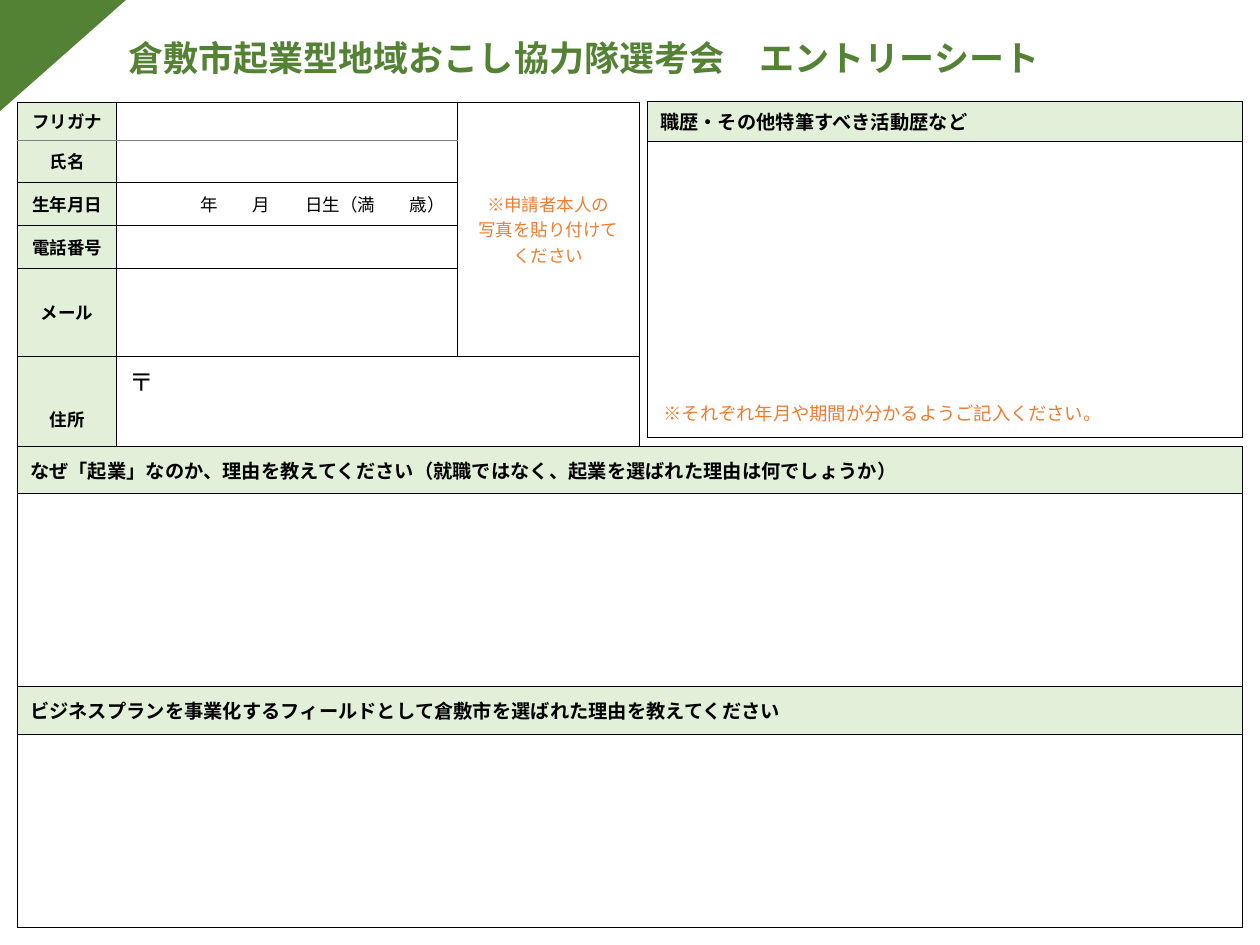
from lxml.etree import SubElement
from pptx import Presentation
from pptx.dml.color import RGBColor
from pptx.enum.shapes import MSO_SHAPE
from pptx.enum.text import MSO_ANCHOR, MSO_AUTO_SIZE, PP_ALIGN
from pptx.oxml.ns import qn
from pptx.util import Pt

FONT = "Noto Sans CJK JP"
GREEN = RGBColor(0x54, 0x82, 0x35)
PALE = RGBColor(0xE2, 0xF0, 0xD9)
ORANGE = RGBColor(0xED, 0x7D, 0x31)
BLACK = RGBColor(0, 0, 0)
GREY = RGBColor(0x80, 0x80, 0x80)
WHITE = RGBColor(0xFF, 0xFF, 0xFF)


def write(tf, text, size, color=BLACK, bold=False, align=PP_ALIGN.LEFT):
    """Fill a text frame, one paragraph for each line of text."""
    tf.word_wrap = True
    for i, line in enumerate(text.split("\n")):
        p = tf.add_paragraph() if i else tf.paragraphs[0]
        p.alignment = align
        r = p.add_run()
        r.text = line
        r.font.size, r.font.bold, r.font.name = Pt(size), bold, FONT
        r.font.color.rgb = color
        SubElement(r.font._element, qn("a:ea"), typeface=FONT)


def style_cell(cell, fill, top=BLACK, bottom=BLACK):
    """Set fill and borders, and keep an empty cell from growing its row."""
    cell.vertical_anchor = MSO_ANCHOR.MIDDLE
    tc_pr = cell._tc.get_or_add_tcPr()
    for tag, color in (("lnL", BLACK), ("lnR", BLACK), ("lnT", top), ("lnB", bottom)):
        ln = SubElement(tc_pr, qn(f"a:{tag}"), w=str(Pt(0.5)))
        SubElement(SubElement(ln, qn("a:solidFill")), qn("a:srgbClr"), val=str(color))
    cell.fill.solid()
    cell.fill.fore_color.rgb = fill
    cell.text_frame.paragraphs[0]._p.get_or_add_endParaRPr().set("sz", "1000")


def add_grid(s, x, y, widths, heights):
    table = s.shapes.add_table(len(heights), len(widths), Pt(x), Pt(y),
                               Pt(sum(widths)), Pt(sum(heights))).table
    table.first_row = table.horz_banding = False
    for col, w in zip(table.columns, widths):
        col.width = Pt(w)
    for row, h in zip(table.rows, heights):
        row.height = Pt(h)
    return table


def add_header(s, x, y, w, h):
    title = s.shapes.title
    title.left, title.top, title.width, title.height = Pt(x), Pt(y), Pt(w), Pt(h)
    tf = title.text_frame
    tf.auto_size = MSO_AUTO_SIZE.NONE
    tf.vertical_anchor = MSO_ANCHOR.MIDDLE
    tf.margin_top = tf.margin_bottom = 0
    write(tf, "倉敷市起業型地域おこし協力隊選考会　エントリーシート", 20, GREEN, True)


def add_corner(s, x, y, w, h):
    sp = s.shapes.add_shape(MSO_SHAPE.RIGHT_TRIANGLE, Pt(x), Pt(y), Pt(w), Pt(h))
    sp.rotation = 180
    sp._element.spPr.get_or_add_xfrm().set("flipH", "1")
    sp.shadow.inherit = False
    sp.fill.solid()
    sp.fill.fore_color.rgb = GREEN
    sp.line.fill.background()


def add_profile(s, x, y, w):
    labels = ["フリガナ", "氏名", "生年月日", "電話番号", "メール", "住所"]
    label_w, photo_w = 56.6, 103.9
    table = add_grid(s, x, y, [label_w, w - label_w - photo_w, photo_w],
                     [21.7, 24.3, 24.5, 24.5, 50.3, 71.3])
    table.cell(0, 2).merge(table.cell(4, 2))
    table.cell(5, 1).merge(table.cell(5, 2))
    for i, label in enumerate(labels):
        for j in range(3):
            in_name = j < 2
            style_cell(table.cell(i, j), WHITE if j else PALE,
                       top=GREY if in_name and i == 1 else BLACK,
                       bottom=GREY if in_name and i == 0 else BLACK)
        write(table.cell(i, 0).text_frame, label, 10, bold=True, align=PP_ALIGN.CENTER)
    write(table.cell(2, 1).text_frame, "年　　月　　日生（満　　歳）", 10, align=PP_ALIGN.RIGHT)
    write(table.cell(0, 2).text_frame, "※申請者本人の\n写真を貼り付けて\nください", 10, ORANGE,
          align=PP_ALIGN.CENTER)
    address = table.cell(5, 1)
    address.vertical_anchor = MSO_ANCHOR.TOP
    write(address.text_frame, "〒", 14)


def add_questions(s, x, y, w, head_h, answer_h, questions):
    """Stack headed answer boxes in one column."""
    table = add_grid(s, x, y, [w], [head_h, answer_h] * len(questions))
    for i, question in enumerate(questions):
        head = table.cell(2 * i, 0)
        style_cell(head, PALE)
        style_cell(table.cell(2 * i + 1, 0), WHITE)
        write(head.text_frame, question, 11, bold=True)


def add_note(s, x, y, w, h):
    tf = s.shapes.add_textbox(Pt(x), Pt(y), Pt(w), Pt(h)).text_frame
    tf.auto_size = MSO_AUTO_SIZE.SHAPE_TO_FIT_TEXT
    write(tf, "※それぞれ年月や期間が分かるようご記入ください。", 10.5, ORANGE)


def main():
    prs = Presentation()
    prs.slide_width, prs.slide_height = Pt(720), Pt(540)
    s = prs.slides.add_slide(prs.slide_layouts[5])
    add_header(s, 66.2, 18.7, 643.7, 28)
    add_corner(s, -0.7, -0.7, 73.4, 64.8)
    add_profile(s, 10, 58.3, 355.2)
    add_questions(s, 370, 57.8, 340, 23, 169, ["職歴・その他特筆すべき活動歴など"])
    add_questions(s, 10, 254.9, 700, 27, 110.6, [
        "なぜ「起業」なのか、理由を教えてください（就職ではなく、起業を選ばれた理由は何でしょうか）",
        "ビジネスプランを事業化するフィールドとして倉敷市を選ばれた理由を教えてください",
    ])
    add_note(s, 372.2, 226, 285, 20)
    prs.save("out.pptx")


if __name__ == "__main__":
    main()
